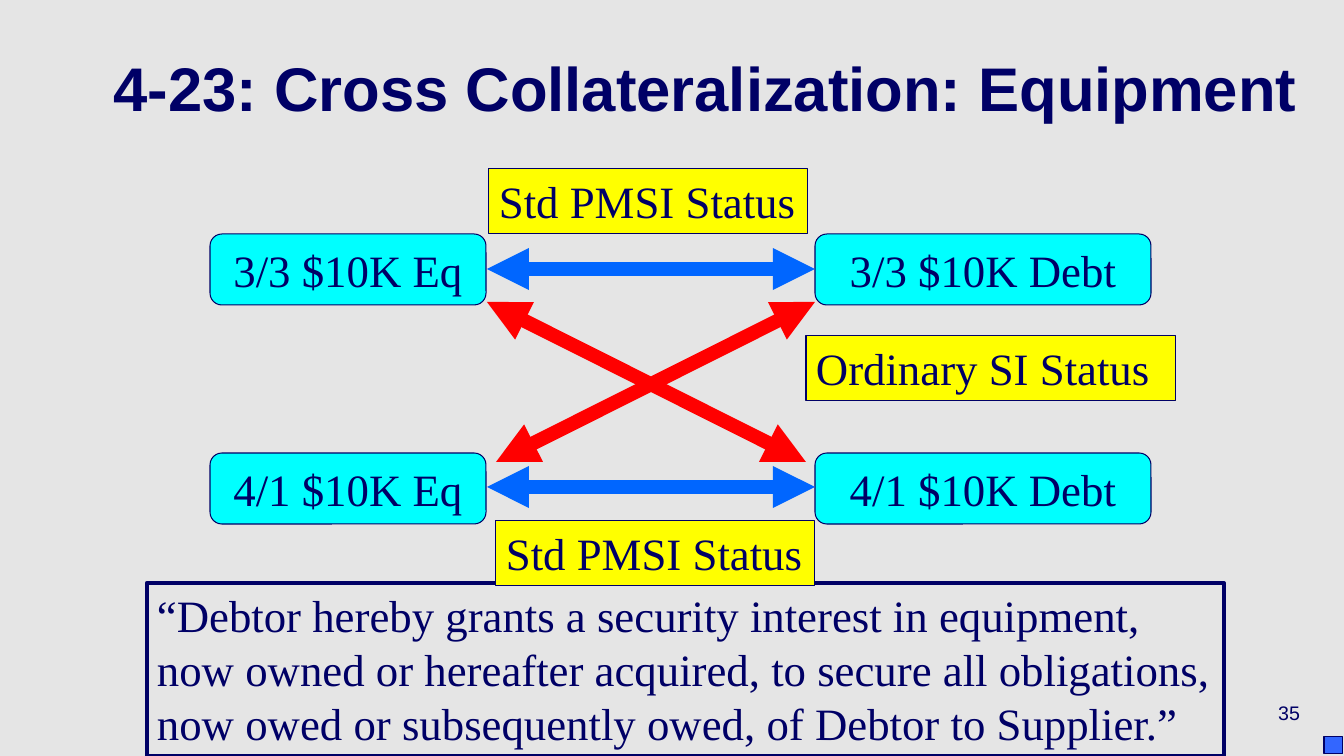
from pptx import Presentation
from pptx.dml.color import RGBColor
from pptx.enum.shapes import MSO_CONNECTOR as Link, MSO_SHAPE as Shape
from pptx.enum.text import MSO_ANCHOR as Anchor, PP_ALIGN as Align
from pptx.oxml.ns import qn
from pptx.util import Pt
from lxml.etree import SubElement

PX = 12192000 / 1344
COLORS = {"back": "E5E5E5", "navy": "000066", "cyan": "00FFFF", "yellow": "FFFF00",
          "blue": "0066FF", "red": "FF0000", "corner": "3366FF"}
SERIF = "Times New Roman"


def color(name):
    return RGBColor.from_string(COLORS[name])


def put(kind, box, text="", fill=None, line=0.75, size=32, font=SERIF,
        align=Align.LEFT, anchor=Anchor.TOP, wrap=True):
    """Add a shape, or a text box when kind is None, with its text."""
    box = [round(n * PX) for n in box]
    if kind is None:
        shape = slide.shapes.add_textbox(*box)
    else:
        shape = slide.shapes.add_shape(kind, *box)
        shape.shadow.inherit = False
        shape.line.color.rgb = color("navy")
        shape.line.width = Pt(line)
        if fill:
            shape.fill.solid()
            shape.fill.fore_color.rgb = color(fill)
        else:
            shape.fill.background()
    frame = shape.text_frame
    frame.word_wrap = wrap
    frame.vertical_anchor = anchor
    frame.text = text
    para = frame.paragraphs[0]
    para.alignment = align
    for run in para.runs:
        run.font.name = font
        run.font.size = Pt(size)
        run.font.color.rgb = color("navy")
    return para


deck = Presentation()
deck.slide_width, deck.slide_height = round(1344 * PX), round(756 * PX)
slide = deck.slides.add_slide(deck.slide_layouts[6])
slide.background.fill.solid()
slide.background.fill.fore_color.rgb = color("back")

# Title and page number
title = put(None, (90, 33, 1232, 126), "4-23: Cross Collateralization: Equipment",
            size=44, font="Arial", align=Align.CENTER, anchor=Anchor.MIDDLE)
title.line_spacing = 0.7
title.runs[0].font.bold = True
put(None, (1030, 688, 280, 50), "35", size=14, font="Arial",
    align=Align.RIGHT, anchor=Anchor.MIDDLE)

# Clause
put(Shape.RECTANGLE, (147, 583, 1077, 173),
    "“Debtor hereby grants a security interest in equipment, now owned or hereafter "
    "acquired, to secure all obligations, now owed or subsequently owed, of Debtor "
    "to Supplier.”", line=3)

# Equipment on the left, debts on the right
for top, date in ((234, "3/3"), (453, "4/1")):
    for left, width, word in ((210, 276, "Eq"), (815, 336, "Debt")):
        put(Shape.FLOWCHART_ALTERNATE_PROCESS, (left, top, width, 71),
            f"{date} $10K {word}", "cyan", align=Align.CENTER, anchor=Anchor.MIDDLE)

# Arrows: straight links, then cross links
for tone, *ends in (("blue", 487, 269, 815, 269), ("blue", 487, 487, 815, 487),
                    ("red", 487, 302, 806, 462), ("red", 815, 302, 496, 462)):
    arrow = slide.shapes.add_connector(Link.STRAIGHT, *[round(n * PX) for n in ends])
    arrow.line.color.rgb = color(tone)
    arrow.line.width = Pt(10)
    stroke = arrow.line._get_or_add_ln()
    for end in ("a:headEnd", "a:tailEnd"):
        SubElement(stroke, qn(end), type="triangle")
    SubElement(arrow._element.spPr, qn("a:effectLst"))

# Status labels
for left, top, width, text, wrap in ((489, 169, 319, "Std PMSI Status", False),
                                     (496, 521, 319, "Std PMSI Status", False),
                                     (806, 336, 370, "Ordinary SI Status", True)):
    put(Shape.RECTANGLE, (left, top, width, 65), text, "yellow", wrap=wrap)

put(Shape.RECTANGLE, (1324, 737, 19, 17), fill="corner")

deck.save("out.pptx")
